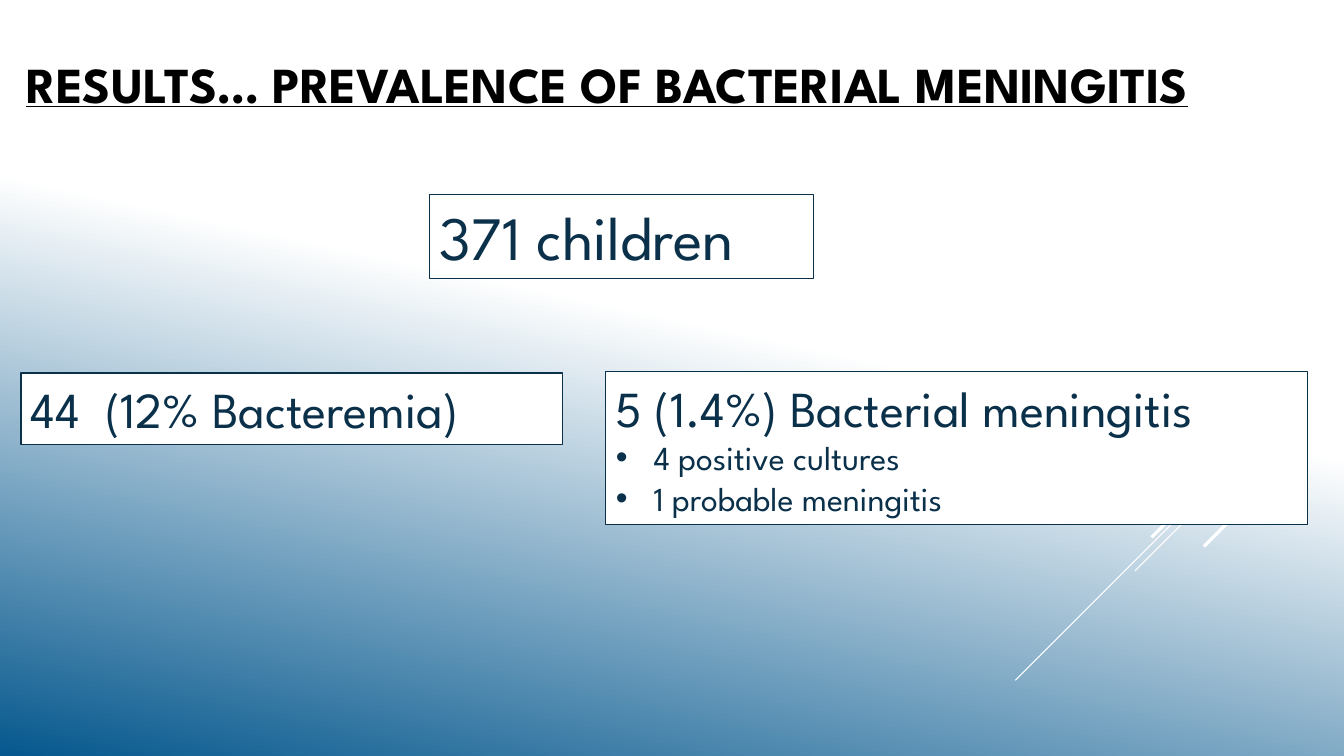
from lxml import etree
from pptx import Presentation
from pptx.dml.color import RGBColor
from pptx.enum import shapes, text
from pptx.oxml import ns
from pptx.util import Cm, Pt

WHITE = RGBColor(0xFF, 0xFF, 0xFF)
BLACK = RGBColor(0x00, 0x00, 0x00)
NAVY = RGBColor(0x0A, 0x30, 0x4A)
BLUE = RGBColor(0x06, 0x58, 0x8E)
FONT = "League Spartan"
BULLET_INDENT = Cm(0.95)

presentation = Presentation()
presentation.slide_width = Cm(33.87)
presentation.slide_height = Cm(19.05)
slide = presentation.slides.add_slide(presentation.slide_layouts[5])

# Background: white fading to blue towards the lower left
background = slide.background.fill
background.gradient()
background.gradient_angle = 360 - 102
for stop, (position, color) in zip(background.gradient_stops, [(0.44, WHITE), (1, BLUE)]):
    stop.position = position
    stop.color.rgb = color

# Diagonal rays: all fall at 45 degrees from the right edge
# (start height in cm, horizontal run in cm, line width in points)
rays = [
    (8.23, 2.54, 0.75),
    (8.86, 8.28, 0.75),
    (9.12, 5.27, 0.75),
    (8.69, 4.85, 2.25),
    (10.24, 3.53, 2.25),
]
for top, run_length, width in rays:
    ray = slide.shapes.add_connector(
        shapes.MSO_CONNECTOR.STRAIGHT,
        Cm(33.87), Cm(top), Cm(33.87 - run_length), Cm(top + run_length),
    )
    ray.line.color.rgb = WHITE
    ray.line.width = Pt(width)
    etree.SubElement(ray._element.spPr, ns.qn("a:effectLst"))

# Title
title = slide.shapes.title
title.left, title.top, title.width, title.height = Cm(0.41), Cm(0), Cm(32.94), Cm(4.19)
title.text_frame.text = "RESULTS… PREVALENCE OF BACTERIAL MENINGITIS"
title.text_frame.auto_size = text.MSO_AUTO_SIZE.NONE
title.text_frame.vertical_anchor = text.MSO_ANCHOR.MIDDLE
heading = title.text_frame.paragraphs[0]
heading.alignment = text.PP_ALIGN.LEFT
heading_font = heading.runs[0].font
heading_font.name = FONT
heading_font.size = Pt(36)
heading_font.bold = True
heading_font.underline = True
heading_font.color.rgb = BLACK

# Result boxes: (left, top, width, height in cm), fill, heading size, heading, bullets
boxes = [
    ((10.82, 4.9, 9.68, 2.13), None, 44, "371 children", []),
    ((0.53, 9.4, 13.64, 1.8), WHITE, 36, "44  (12% Bacteremia)", []),
    ((15.27, 9.37, 17.68, 3.84), WHITE, 36, "5 (1.4%) Bacterial meningitis",
     ["4 positive cultures", "1 probable meningitis"]),
]
for bounds, fill, heading_size, label, bullets in boxes:
    box = slide.shapes.add_shape(shapes.MSO_SHAPE.RECTANGLE, *map(Cm, bounds))
    box.shadow.inherit = False
    if fill is None:
        box.fill.background()
    else:
        box.fill.solid()
        box.fill.fore_color.rgb = fill
    box.line.color.rgb = NAVY
    box.line.width = Pt(0.75)

    frame = box.text_frame
    frame.word_wrap = True
    frame.vertical_anchor = text.MSO_ANCHOR.TOP
    frame.text = "\n".join([label] + bullets)
    for index, paragraph in enumerate(frame.paragraphs):
        paragraph.alignment = text.PP_ALIGN.LEFT
        if index > 0:
            properties = paragraph._p.get_or_add_pPr()
            properties.set("marL", str(BULLET_INDENT))
            properties.set("indent", str(-BULLET_INDENT))
            etree.SubElement(properties, ns.qn("a:buFont"), typeface="Arial")
            etree.SubElement(properties, ns.qn("a:buChar"), char="•")
        font = paragraph.runs[0].font
        font.name = FONT
        font.size = Pt(24 if index else heading_size)
        font.color.rgb = NAVY

presentation.save("out.pptx")
